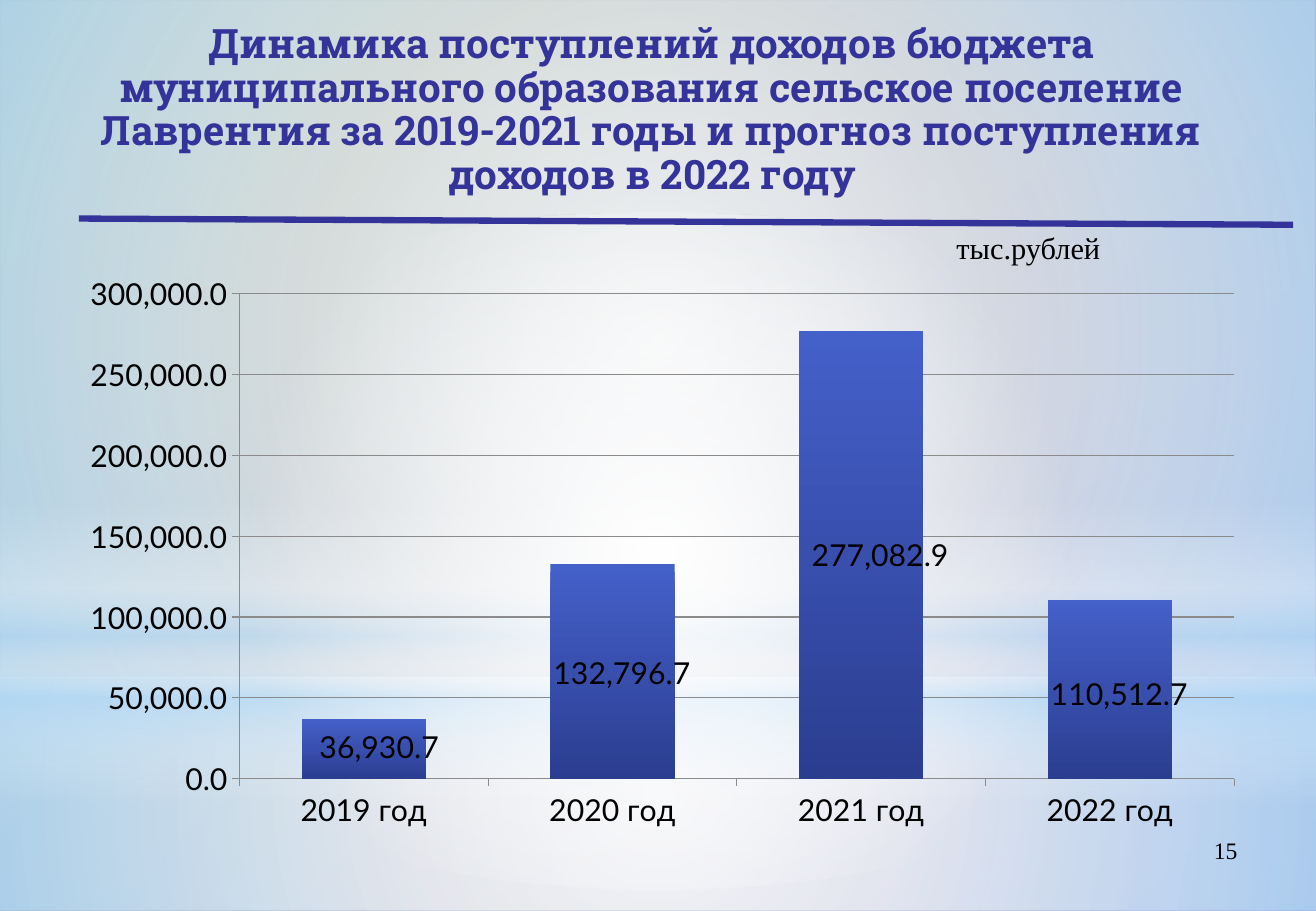
from lxml.etree import SubElement
from pptx import Presentation
from pptx.chart.data import CategoryChartData
from pptx.dml.color import RGBColor
from pptx.enum.chart import XL_CHART_TYPE, XL_TICK_MARK
from pptx.enum.shapes import MSO_CONNECTOR, MSO_SHAPE
from pptx.enum.text import MSO_ANCHOR, PP_ALIGN
from pptx.oxml.ns import qn
from pptx.util import Cm, Pt

INDIGO = RGBColor(0x33, 0x33, 0x99)
BLACK = RGBColor(0, 0, 0)
GRAY = RGBColor(0x8B, 0x8B, 0x8B)
WHITE = RGBColor(0xFF, 0xFF, 0xFF)
SKY = RGBColor(0xB4, 0xDC, 0xFA)
SAGE = RGBColor(0x96, 0xAB, 0x94)
LILAC = RGBColor(0x84, 0x88, 0xC4)
BAR_TOP = RGBColor(0x44, 0x60, 0xC9)
BAR_MID = RGBColor(0x38, 0x4F, 0xAE)
BAR_END = RGBColor(0x2A, 0x3D, 0x8F)

WIDTH, HEIGHT = 27.53, 19.05
SPLIT = 14.17
NUMBER = "#,##0.0"
INCOME = {"2019 год": 36930.7, "2020 год": 132796.7,
          "2021 год": 277082.9, "2022 год": 110512.7}
SHIFTS = [(0.013, -0.005), (0.008, 0.002), (0.016, 0), (0.008, 0.007)]
PLOT = {"x": 0.145, "y": 0.054, "w": 0.835, "h": 0.845}


def add(parent, tag, **attrs):
    return SubElement(parent, qn(tag), {k: str(v) for k, v in attrs.items()})


def apply(target, values):
    for name, value in values.items():
        setattr(target, name, value)


def shade(fill, root, stops, angle=None):
    """Fill with (position, colour, opacity) stops; radial without an angle."""
    fill.gradient()
    grad = next(root.iter(qn("a:gradFill")))
    del grad[:]
    chain = add(grad, "a:gsLst")
    for place, color, alpha in stops:
        stop = add(chain, "a:gs", pos=place * 1000)
        tint = add(stop, "a:srgbClr", val=color)
        if alpha < 100:
            add(tint, "a:alpha", val=alpha * 1000)
    if angle is None:
        focus = add(grad, "a:path", path="circle")
        add(focus, "a:fillToRect", **dict.fromkeys("ltrb", 50000))
    else:
        add(grad, "a:lin", ang=angle * 60000, scaled=0)


def place(layout, modes, spots):
    manual = add(layout, "c:manualLayout")
    for tag, value in {**modes, **spots}.items():
        add(manual, f"c:{tag}", val=value)


class Deck:
    def __init__(self):
        self.prs = Presentation()
        self.prs.slide_width, self.prs.slide_height = Cm(WIDTH), Cm(HEIGHT)
        self.slide = self.prs.slides.add_slide(self.prs.slide_layouts[6])
        self.shapes = self.slide.shapes

    def back(self, stops, angle):
        shade(self.slide.background.fill, self.slide.element, stops, angle)

    def glow(self, kind, top, height, stops, angle=None):
        """Add a full-width translucent gradient shape."""
        shape = self.shapes.add_shape(kind, 0, Cm(top), Cm(WIDTH), Cm(height))
        shape.shadow.inherit = False
        shape.line.fill.background()
        shade(shape.fill, shape.element, stops, angle)

    def text(self, words, box, font, wrap=True, anchor=MSO_ANCHOR.TOP, **para):
        frame = self.shapes.add_textbox(*map(Cm, box)).text_frame
        apply(frame, {"word_wrap": wrap, "vertical_anchor": anchor})
        line = frame.paragraphs[0]
        apply(line, para)
        run = line.add_run()
        run.text = words
        color = font.pop("color", BLACK)
        apply(run.font, font)
        run.font.color.rgb = color

    def rule(self, start, end):
        line = self.shapes.add_connector(
            MSO_CONNECTOR.STRAIGHT, *map(Cm, start + end))
        line.line.color.rgb = INDIGO
        line.line.width = Pt(3.75)
        add(line.element.spPr, "a:effectLst")

    def chart(self, box):
        data = CategoryChartData(number_format=NUMBER)
        data.categories = list(INCOME)
        data.add_series("Доходы", list(INCOME.values()))
        chart = self.shapes.add_chart(
            XL_CHART_TYPE.COLUMN_STACKED, *map(Cm, box), data).chart
        apply(chart, {"has_legend": False, "has_title": False})
        apply(chart.font, {"size": Pt(17.9), "name": "Lato"})
        chart.font.color.rgb = BLACK

        area = next(chart.element.iter(qn("c:plotArea")))
        for old in area.findall(qn("c:layout")):
            area.remove(old)
        layout = add(area, "c:layout")
        area.insert(0, layout)
        place(layout, {"layoutTarget": "inner", "xMode": "edge", "yMode": "edge"}, PLOT)

        for axis in (chart.category_axis, chart.value_axis):
            axis.major_tick_mark = XL_TICK_MARK.OUTSIDE
            axis.format.line.color.rgb = GRAY
        scale = chart.value_axis
        apply(scale, {"minimum_scale": 0, "maximum_scale": 300000,
                      "major_unit": 50000, "has_major_gridlines": True})
        scale.major_gridlines.format.line.color.rgb = GRAY
        apply(scale.tick_labels, {"number_format": NUMBER,
                                  "number_format_is_linked": False})

        plot = chart.plots[0]
        apply(plot, {"gap_width": 100, "overlap": 100, "vary_by_categories": False})
        bars = plot.series[0]
        shade(bars.format.fill, bars.format.element if hasattr(bars.format, "element")
              else chart.element,
              [(0, BAR_TOP, 100), (50, BAR_MID, 100), (100, BAR_END, 100)], 90)
        self.labels(bars)

    def labels(self, bars):
        """Show the values, each moved a little from its bar's centre."""
        apply(bars.data_labels, {"show_value": True, "number_format": NUMBER,
                                 "number_format_is_linked": False})
        for index, (x, y) in enumerate(SHIFTS):
            font = bars.points[index].data_label.font
            apply(font, {"size": Pt(17.9), "name": "Lato"})
            font.color.rgb = BLACK
        for label, (x, y) in zip(bars.data_labels._element.findall(qn("c:dLbl")), SHIFTS):
            layout = add(label, "c:layout")
            form = add(label, "c:numFmt", formatCode=NUMBER, sourceLinked=0)
            label.insert(1, layout)
            label.insert(2, form)
            place(layout, {}, {"x": x, "y": y})


def main():
    deck = Deck()
    deck.back([(0, SAGE, 100), (100, LILAC, 100)], 45)
    rect = MSO_SHAPE.RECTANGLE
    deck.glow(rect, SPLIT, HEIGHT - SPLIT,
              [(0, WHITE, 91), (37, WHITE, 76), (100, SKY, 79)])
    deck.glow(rect, 0, SPLIT, [(0, WHITE, 89), (48, WHITE, 62), (100, SKY, 79)])
    deck.glow(rect, 10.46, 6.35,
              [(0, WHITE, 0), (29, WHITE, 30), (45, SKY, 40),
               (55, WHITE, 26), (65, SKY, 60), (100, WHITE, 0)], 90)
    deck.glow(MSO_SHAPE.OVAL, 4.44, SPLIT, [(0, WHITE, 100), (56, WHITE, 0)])

    serif = "Times New Roman"
    deck.text("15", (19.71, 17.35, 6.43, 1.32), {"size": Pt(14), "name": serif},
              alignment=PP_ALIGN.RIGHT)
    deck.text("Динамика поступлений доходов бюджета муниципального образования "
              "сельское поселение Лаврентия за 2019-2021 годы и прогноз "
              "поступления доходов в 2022 году", (1.24, 0.58, 24.77, 3.48),
              {"size": Pt(24), "name": "Roboto Slab", "bold": True, "color": INDIGO},
              anchor=MSO_ANCHOR.MIDDLE, alignment=PP_ALIGN.CENTER, line_spacing=0.9)
    deck.rule((1.65, 4.57), (27.05, 4.7))
    deck.chart((1.4, 5.49, 24.92, 12.01))
    deck.text("тыс.рублей", (19.76, 4.67, 3.56, 1.02),
              {"size": Pt(18), "name": serif}, wrap=False)
    deck.prs.save("out.pptx")


if __name__ == "__main__":
    main()
